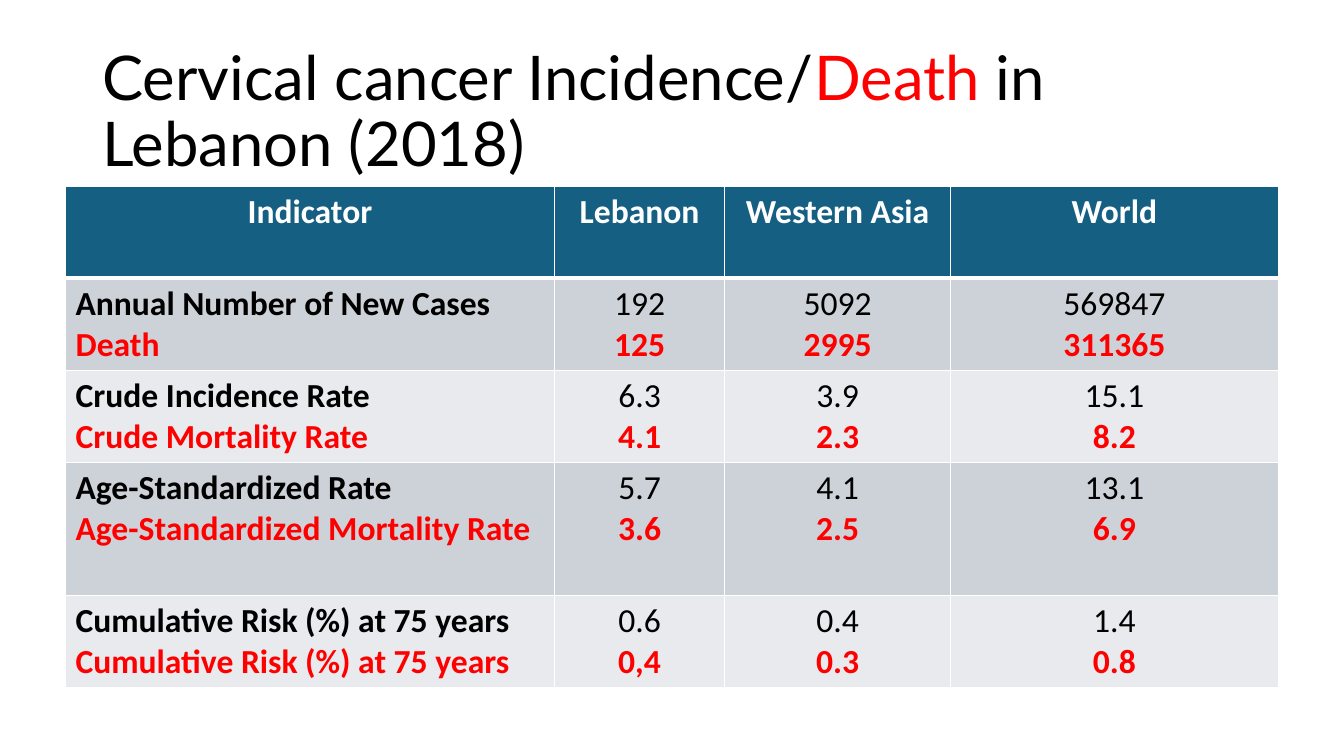
import pptx
import pptx.dml.color
import pptx.enum.text
import pptx.oxml
import pptx.oxml.ns
import pptx.util

Pt = pptx.util.Pt
ALIGN = pptx.enum.text.PP_ALIGN
ANCHOR = pptx.enum.text.MSO_ANCHOR
COLOURS = {
    "black": "000000", "red": "FF0000", "white": "FFFFFF",
    "header": "156082", "dark band": "CCD2D8", "light band": "E8EAED",
}


def add_span(para, text, font, size, colour, bold=False):
    span = para.add_run()
    span.text = text
    span.font.name = font
    span.font.size = Pt(size)
    span.font.bold = bold
    span.font.color.rgb = pptx.dml.color.RGBColor.from_string(COLOURS[colour])


def add_border(cell, side, width):
    cell._tc.get_or_add_tcPr().append(pptx.oxml.parse_xml(
        f'<a:{side} {pptx.oxml.ns.nsdecls("a")} w="{Pt(width)}"><a:solidFill>'
        f'<a:srgbClr val="{COLOURS["white"]}"/></a:solidFill></a:{side}>'))


deck = pptx.Presentation()
deck.slide_width, deck.slide_height = Pt(960), Pt(540)
page = deck.slides.add_slide(deck.slide_layouts[5])

# Title
title = page.shapes.title
title.left, title.top, title.width, title.height = Pt(66), Pt(28.75), Pt(828), Pt(104.4)
frame = title.text_frame
frame.word_wrap = True
frame.auto_size = pptx.enum.text.MSO_AUTO_SIZE.NONE
frame.vertical_anchor = ANCHOR.MIDDLE
para = frame.paragraphs[0]
para.alignment = ALIGN.LEFT
para.line_spacing = 0.9
for text, colour in [("Cervical cancer Incidence/", "black"), ("Death", "red"),
                     (" in Lebanon (2018)", "black")]:
    add_span(para, text, "Lato", 44, colour)

# Table content: each body cell holds incidence above mortality
header = ["Indicator", "Lebanon", "Western Asia", "World"]
body = [
    [("Annual Number of New Cases", "Death"),
     ("192", "125"), ("5092", "2995"), ("569847", "311365")],
    [("Crude Incidence Rate", "Crude Mortality Rate"),
     ("6.3", "4.1"), ("3.9", "2.3"), ("15.1", "8.2")],
    [("Age-Standardized Rate", "Age-Standardized Mortality Rate"),
     ("5.7", "3.6"), ("4.1", "2.5"), ("13.1", "6.9")],
    [("Cumulative Risk (%) at 75 years", "Cumulative Risk (%) at 75 years"),
     ("0.6", "0,4"), ("0.4", "0.3"), ("1.4", "0.8")],
]
rows = [[(name,) for name in header]] + body

# Table grid
widths = [349.2, 121.7, 161.3, 234]
heights = [65.5, 65.5, 65.5, 95, 65.5]
table = page.shapes.add_table(len(rows), len(widths), Pt(46.8), Pt(133.2),
                              Pt(sum(widths)), Pt(sum(heights))).table
for column, width in zip(table.columns, widths):
    column.width = Pt(width)
for row, height in zip(table.rows, heights):
    row.height = Pt(height)

# Table cells
for row_number, row in enumerate(rows):
    is_header = row_number == 0
    band = "header" if is_header else ("light band", "dark band")[row_number % 2]
    for column_number, lines in enumerate(row):
        cell = table.cell(row_number, column_number)
        is_label = column_number == 0 and not is_header
        for side in ("lnL", "lnR", "lnT", "lnB"):
            under_header = (row_number, side) in [(0, "lnB"), (1, "lnT")]
            add_border(cell, side, 3 if under_header else 1)
        cell.fill.solid()
        cell.fill.fore_color.rgb = pptx.dml.color.RGBColor.from_string(COLOURS[band])
        cell.vertical_anchor = ANCHOR.TOP
        for line_number, text in enumerate(lines):
            box = cell.text_frame
            para = box.add_paragraph() if line_number else box.paragraphs[0]
            para.alignment = ALIGN.LEFT if is_label else ALIGN.CENTER
            colour = "white" if is_header else ("black", "red")[line_number]
            add_span(para, text, "Calibri", 24, colour,
                     bold=is_header or is_label or line_number == 1)

deck.save("out.pptx")
